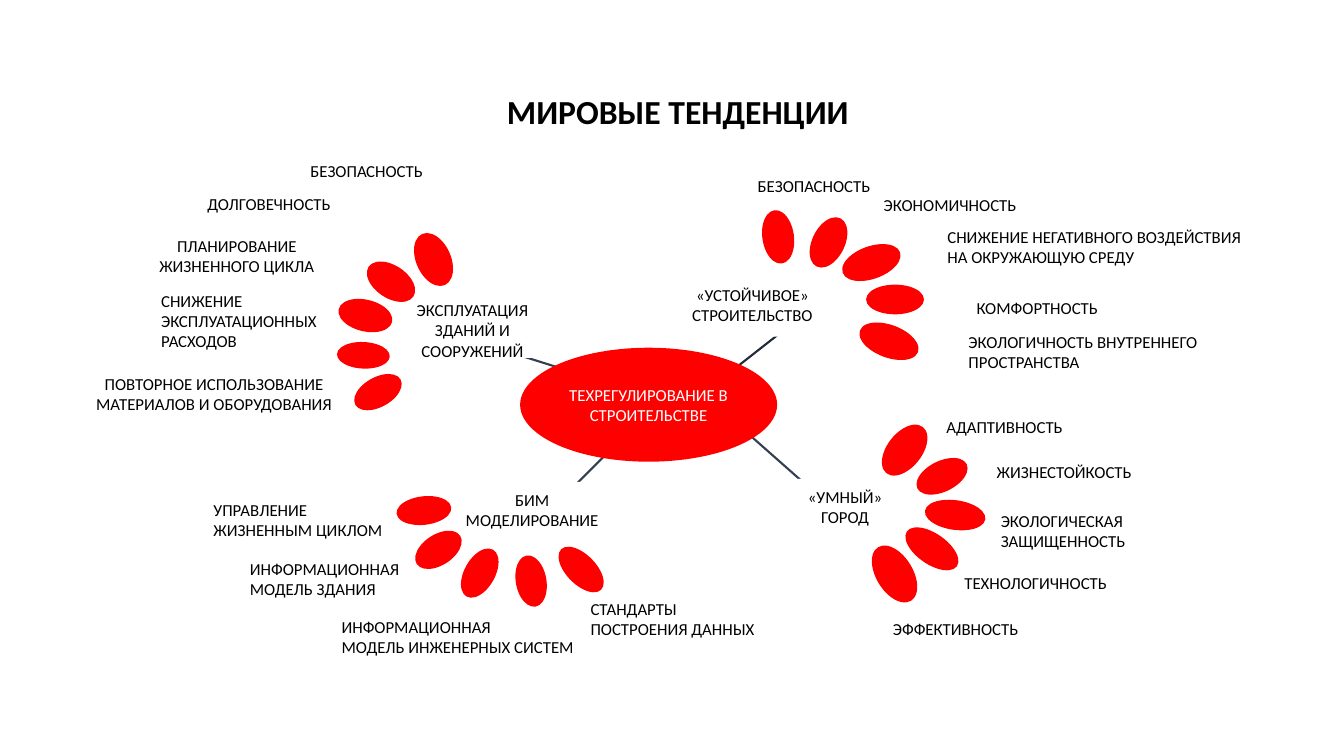
from lxml.etree import SubElement
from pptx import Presentation
from pptx.dml.color import RGBColor
from pptx.enum.shapes import MSO_CONNECTOR, MSO_SHAPE
from pptx.enum.text import MSO_ANCHOR, MSO_AUTO_SIZE, PP_ALIGN
from pptx.oxml.ns import qn
from pptx.util import Pt

RED = RGBColor(0xFF, 0x00, 0x00)
WHITE = RGBColor(0xFF, 0xFF, 0xFF)
BLACK = RGBColor(0x00, 0x00, 0x00)
SLATE = RGBColor(0x33, 0x3F, 0x50)
NAVY = RGBColor(0x22, 0x2A, 0x35)

TITLE_FONT = {"name": "Calibri", "size": Pt(24), "bold": True}
BODY_FONT = {"name": "Calibri", "size": Pt(12), "bold": False}
CENTERED = {"alignment": PP_ALIGN.CENTER}
LEFT = {"alignment": PP_ALIGN.LEFT}
TITLE_PARAGRAPH = {**CENTERED, "line_spacing": 0.9}
MIDDLE_FRAME = {"word_wrap": True, "vertical_anchor": MSO_ANCHOR.MIDDLE}
LABEL_FRAME = {"auto_size": MSO_AUTO_SIZE.SHAPE_TO_FIT_TEXT, "vertical_anchor": MSO_ANCHOR.TOP}
UNWRAPPED = {"БЕЗОПАСНОСТЬ", "АДАПТИВНОСТЬ", "ЖИЗНЕСТОЙКОСТЬ"}

OPERATION = {
    "spoke": (310.3, 234.7, 411.1, 266.4, SLATE),
    "plates": [
        ("ЭКСПЛУАТАЦИЯ ЗДАНИЙ И СООРУЖЕНИЙ", 281, 216, 113, 39.6),
        ("ПЛАНИРОВАНИЕ ЖИЗНЕННОГО ЦИКЛА", 103.7, 167.8, 131, 29.5),
        ("ПОВТОРНОЕ ИСПОЛЬЗОВАНИЕ МАТЕРИАЛОВ И ОБОРУДОВАНИЯ", 59, 262, 188, 38),
    ],
    "petals": [
        (290.2, 173.5, 38.9, 23.8, 66.1),
        (260.6, 190.1, 37.4, 22.3, 33.7),
        (241.9, 214.6, 38.2, 21.6, 13.5),
        (241.2, 244.8, 36.7, 18, 2.6),
        (252, 270, 36, 20.2, 330.7),
    ],
    "labels": [
        ("БЕЗОПАСНОСТЬ", 214.6, 111.6, 95.8, 21.6),
        ("ДОЛГОВЕЧНОСТЬ", 141.1, 134.6, 103.7, 21.6),
        ("СНИЖЕНИЕ\nЭКСПЛУАТАЦИОННЫХ\nРАСХОДОВ", 108, 203.8, 140.4, 51),
    ],
}
SUSTAINABLE = {
    "spoke": (506.2, 277.9, 596.2, 207.4, NAVY),
    "plates": [("«УСТОЙЧИВОЕ» СТРОИТЕЛЬСТВО", 474.5, 194.4, 126, 46)],
    "petals": [
        (537.1, 158.4, 37.4, 21.6, 81.9),
        (573.1, 162, 37.4, 22.3, 116.2),
        (601.2, 176.4, 42.5, 22.3, 340.3),
        (619.2, 203.8, 40.3, 20.2, 0),
        (613.4, 232.6, 43.2, 22.3, 20.5),
    ],
    "labels": [
        ("БЕЗОПАСНОСТЬ", 534.2, 121.7, 95.8, 21.6),
        ("ЭКОНОМИЧНОСТЬ", 624.2, 135.4, 120.2, 21.6),
        ("СНИЖЕНИЕ НЕГАТИВНОГО ВОЗДЕЙСТВИЯ\nНА ОКРУЖАЮЩУЮ СРЕДУ", 669.6, 158.4, 248.4, 36),
        ("КОМФОРТНОСТЬ", 690.5, 208.8, 156.2, 21.6),
        ("ЭКОЛОГИЧНОСТЬ ВНУТРЕННЕГО\nПРОСТРАНСТВА", 684.7, 233.3, 223.2, 36),
    ],
}
SMART_CITY = {
    "spoke": (534.2, 309.6, 583.9, 353.5, SLATE),
    "plates": [("«УМНЫЙ» ГОРОД", 561.6, 342, 84.2, 39.6)],
    "petals": [
        (625.7, 309.6, 41, 23.8, 308.3),
        (653.8, 329.8, 38.2, 20.9, 333.8),
        (661, 357.8, 42.5, 20.2, 7.9),
        (644.4, 381.6, 42.5, 20.9, 34.8),
        (617, 397.4, 43.9, 25.2, 58.5),
    ],
    "labels": [
        ("АДАПТИВНОСТЬ", 668.9, 294.5, 101.5, 21.6),
        ("ЖИЗНЕСТОЙКОСТЬ", 704.9, 326.2, 112.3, 21.6),
        ("ЭКОЛОГИЧЕСКАЯ\nЗАЩИЩЕННОСТЬ", 707.8, 361.4, 136.8, 36),
        ("ТЕХНОЛОГИЧНОСТЬ", 681.8, 405.4, 133.9, 21.6),
        ("ЭФФЕКТИВНОСТЬ", 630.7, 438.5, 147.6, 21.6),
    ],
}
MODELLING = {
    "spoke": (391.7, 365.8, 434.2, 323.3, SLATE),
    "plates": [("БИМ МОДЕЛИРОВАНИЕ", 317.5, 344.2, 125.3, 39.6)],
    "petals": [
        (283.7, 355, 38.2, 19.4, 353.5),
        (295.2, 382.3, 36, 20.9, 326.9),
        (324, 398.9, 37.4, 20.9, 299.4),
        (361.4, 404.6, 36, 20.9, 260.1),
        (395.3, 396.7, 39.6, 20.2, 225.5),
    ],
    "labels": [
        ("УПРАВЛЕНИЕ ЖИЗНЕННЫМ ЦИКЛОМ", 145.4, 353.5, 145.4, 36),
        ("ИНФОРМАЦИОННАЯ\nМОДЕЛЬ ЗДАНИЯ", 171.4, 395.3, 131, 36),
        ("ИНФОРМАЦИОННАЯ\nМОДЕЛЬ ИНЖЕНЕРНЫХ СИСТЕМ", 236.9, 437, 186.5, 36),
        ("СТАНДАРТЫ ПОСТРОЕНИЯ ДАННЫХ", 414.7, 424.1, 135.4, 36),
    ],
}
BRANCHES = [OPERATION, MODELLING, SMART_CITY, SUSTAINABLE]


def apply_format(target, values):
    """Set every attribute named in a dict of format values."""
    for name, value in values.items():
        setattr(target, name, value)


def write_text(frame, text, frame_format, paragraph_format, font_format, color):
    """Fill a text frame and format all its paragraphs alike."""
    frame.text = text
    apply_format(frame, frame_format)
    for paragraph in frame.paragraphs:
        apply_format(paragraph, paragraph_format)
        apply_format(paragraph.font, font_format)
        paragraph.font.color.rgb = color


def add_title(slide, text, *box):
    """Move the title placeholder and fill it."""
    title = slide.shapes.title
    apply_format(title, dict(zip(("left", "top", "width", "height"), map(Pt, box))))
    write_text(title.text_frame, text, MIDDLE_FRAME, TITLE_PARAGRAPH, TITLE_FONT, BLACK)


def add_spoke(slide, x1, y1, x2, y2, color):
    """Draw a line between the centre and a branch."""
    spoke = slide.shapes.add_connector(MSO_CONNECTOR.STRAIGHT, *map(Pt, (x1, y1, x2, y2)))
    spoke.line.color.rgb = color
    spoke.line.width = Pt(1.5)
    SubElement(spoke._element.spPr, qn("a:effectLst"))


def add_filled(slide, preset, box, color):
    """Add a flat preset shape without an outline."""
    filled = slide.shapes.add_shape(preset, *map(Pt, box))
    filled.shadow.inherit = False
    filled.fill.solid()
    filled.fill.fore_color.rgb = color
    filled.line.fill.background()
    return filled


def add_core(slide, text, *box):
    """Add the red ellipse in the centre."""
    core = add_filled(slide, MSO_SHAPE.OVAL, box, RED)
    write_text(core.text_frame, text, MIDDLE_FRAME, CENTERED, BODY_FONT, WHITE)


def add_plate(slide, text, *box):
    """Add centred text on a white rectangle."""
    plate = add_filled(slide, MSO_SHAPE.RECTANGLE, box, WHITE)
    write_text(plate.text_frame, text, MIDDLE_FRAME, CENTERED, BODY_FONT, BLACK)


def add_petal(slide, left, top, width, height, angle):
    """Add a turned red ellipse."""
    petal = add_filled(slide, MSO_SHAPE.OVAL, (left, top, width, height), RED)
    petal.rotation = angle
    petal.line.color.rgb = RED
    petal.line.width = Pt(1)


def add_label(slide, text, *box):
    """Add a left-aligned text box beside a petal."""
    label = slide.shapes.add_textbox(*map(Pt, box))
    frame_format = {**LABEL_FRAME, "word_wrap": text not in UNWRAPPED}
    write_text(label.text_frame, text, frame_format, LEFT, BODY_FONT, BLACK)


def main():
    """Build the slide and save it."""
    deck = Presentation()
    apply_format(deck, {"slide_width": Pt(960), "slide_height": Pt(540)})
    slide = deck.slides.add_slide(deck.slide_layouts.get_by_name("Title Only"))
    for branch in BRANCHES:
        add_spoke(slide, *branch["spoke"])
    add_title(slide, "МИРОВЫЕ ТЕНДЕНЦИИ", 187.2, 59.8, 594, 42.5)
    add_core(slide, "ТЕХРЕГУЛИРОВАНИЕ В СТРОИТЕЛЬСТВЕ", 371.5, 248.4, 183.6, 81.4)
    for branch in BRANCHES:
        for part, add_part in (("plates", add_plate), ("petals", add_petal), ("labels", add_label)):
            for values in branch[part]:
                add_part(slide, *values)
    deck.save("out.pptx")


if __name__ == "__main__":
    main()
